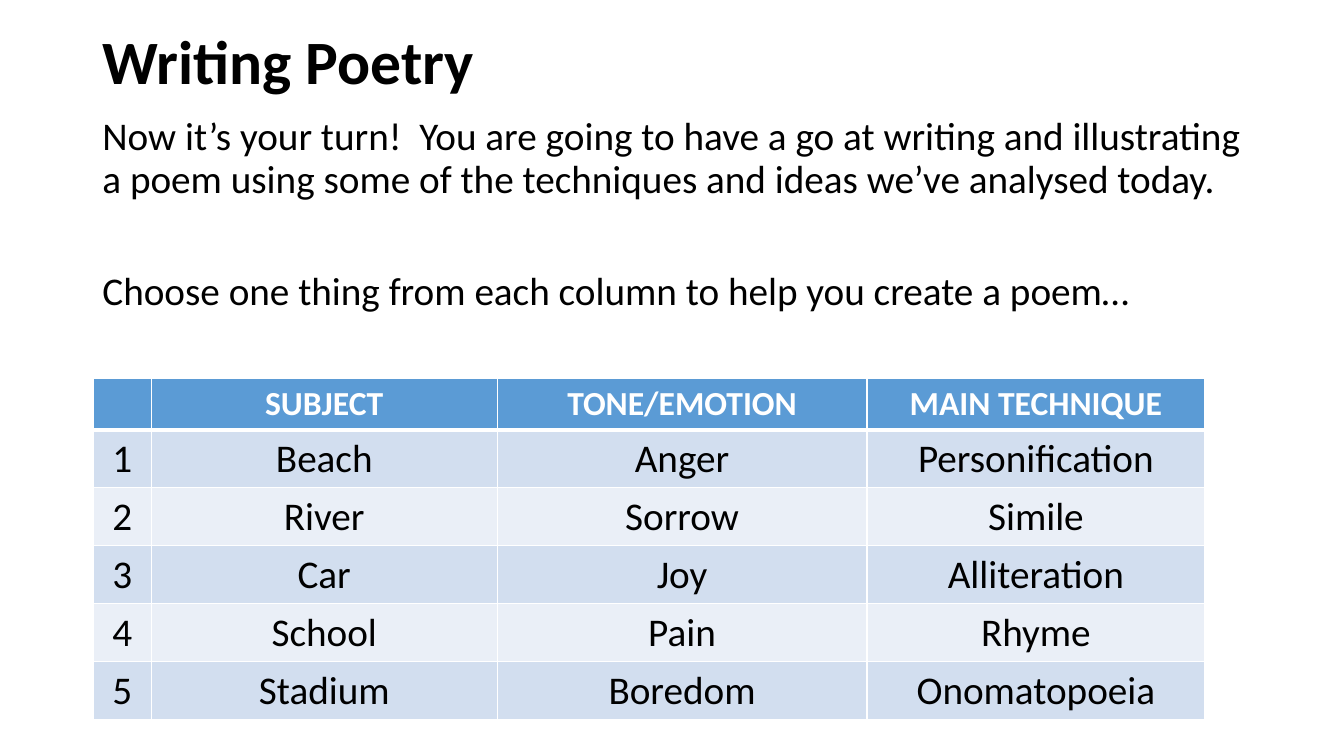
from lxml.etree import SubElement
from pptx import Presentation
from pptx.dml.color import RGBColor
from pptx.enum.text import MSO_ANCHOR, MSO_AUTO_SIZE, PP_ALIGN
from pptx.oxml import parse_xml
from pptx.oxml.ns import nsdecls, qn
from pptx.util import Pt

HUES = {"ink": "000000", "white": "FFFFFF", "head": "5B9BD5",
        "dark": "D2DEEF", "light": "EAEFF7"}
FACE = "Calibri"
INTRO = [
    "Now it’s your turn!  You are going to have a go at writing and illustrating "
    "a poem using some of the techniques and ideas we’ve analysed today.",
    "Choose one thing from each column to help you create a poem…",
]
IDEAS = [
    ["", "SUBJECT", "TONE/EMOTION", "MAIN TECHNIQUE"],
    ["1", "Beach", "Anger", "Personification"],
    ["2", "River", "Sorrow", "Simile"],
    ["3", "Car", "Joy", "Alliteration"],
    ["4", "School", "Pain", "Rhyme"],
    ["5", "Stadium", "Boredom", "Onomatopoeia"],
]
WIDTHS = [41.76, 246.96, 264.24, 241.2]
ROW = 36.72


def color(name):
    return RGBColor.from_string(HUES[name])


def place(shape, box):
    shape.left, shape.top, shape.width, shape.height = map(Pt, box)


def style(para, size, hue="ink", bold=False, align=PP_ALIGN.LEFT):
    para.alignment = align
    for run in para.runs:
        font = run.font
        font.name, font.size, font.bold = FACE, Pt(size), bold
        font.color.rgb = color(hue)


def add_title(slide, box):
    title = slide.shapes.title
    place(title, box)
    frame = title.text_frame
    frame.text = "Writing Poetry"
    frame.vertical_anchor = MSO_ANCHOR.MIDDLE
    frame.auto_size = MSO_AUTO_SIZE.NONE
    frame.paragraphs[0].line_spacing = 0.9
    style(frame.paragraphs[0], 44, bold=True)


def add_intro(slide, box):
    body = slide.placeholders[1]
    place(body, box)
    frame = body.text_frame
    frame.text = "\n".join(INTRO)
    frame.auto_size = MSO_AUTO_SIZE.NONE
    for para, gap in zip(frame.paragraphs, [10, 50]):
        para.line_spacing = 0.9
        para.space_before = Pt(gap)
        style(para, 28)
        props = para._p.get_or_add_pPr()
        props.set("marL", "0")
        props.set("indent", "0")
        SubElement(props, qn("a:buNone"))


def add_edges(cell, base):
    """Draw white cell borders, with the bottom one base points wide."""
    props = cell._tc.get_or_add_tcPr()
    for spot, (side, width) in enumerate(zip("LRTB", [1, 1, 1, base])):
        props.insert(spot, parse_xml(
            f'<a:ln{side} {nsdecls("a")} w="{Pt(width)}"><a:solidFill>'
            f'<a:srgbClr val="{HUES["white"]}"/></a:solidFill></a:ln{side}>'))


def add_ideas(slide, box):
    frame = slide.shapes.add_table(len(IDEAS), len(WIDTHS), *map(Pt, box))
    table = frame.table
    for col, width in zip(table.columns, WIDTHS):
        col.width = Pt(width)
    for r, words in enumerate(IDEAS):
        table.rows[r].height = Pt(ROW)
        head = r == 0
        fill = "head" if head else "dark" if r % 2 else "light"
        for c, word in enumerate(words):
            cell = table.cell(r, c)
            cell.text = word
            cell.fill.solid()
            cell.fill.fore_color.rgb = color(fill)
            add_edges(cell, 3 if head else 1)
            style(cell.text_frame.paragraphs[0], 24 if head else 28,
                  "white" if head else "ink", head, PP_ALIGN.CENTER)
    place(frame, box)


def main():
    deck = Presentation()
    deck.slide_width, deck.slide_height = Pt(960), Pt(540)
    slide = deck.slides.add_slide(deck.slide_layouts[1])
    add_title(slide, (66, -6, 828, 104.4))
    add_intro(slide, (66, 80, 828, 342.7))
    add_ideas(slide, (66.4, 270.2, sum(WIDTHS), 240.48))
    deck.save("out.pptx")


if __name__ == "__main__":
    main()
